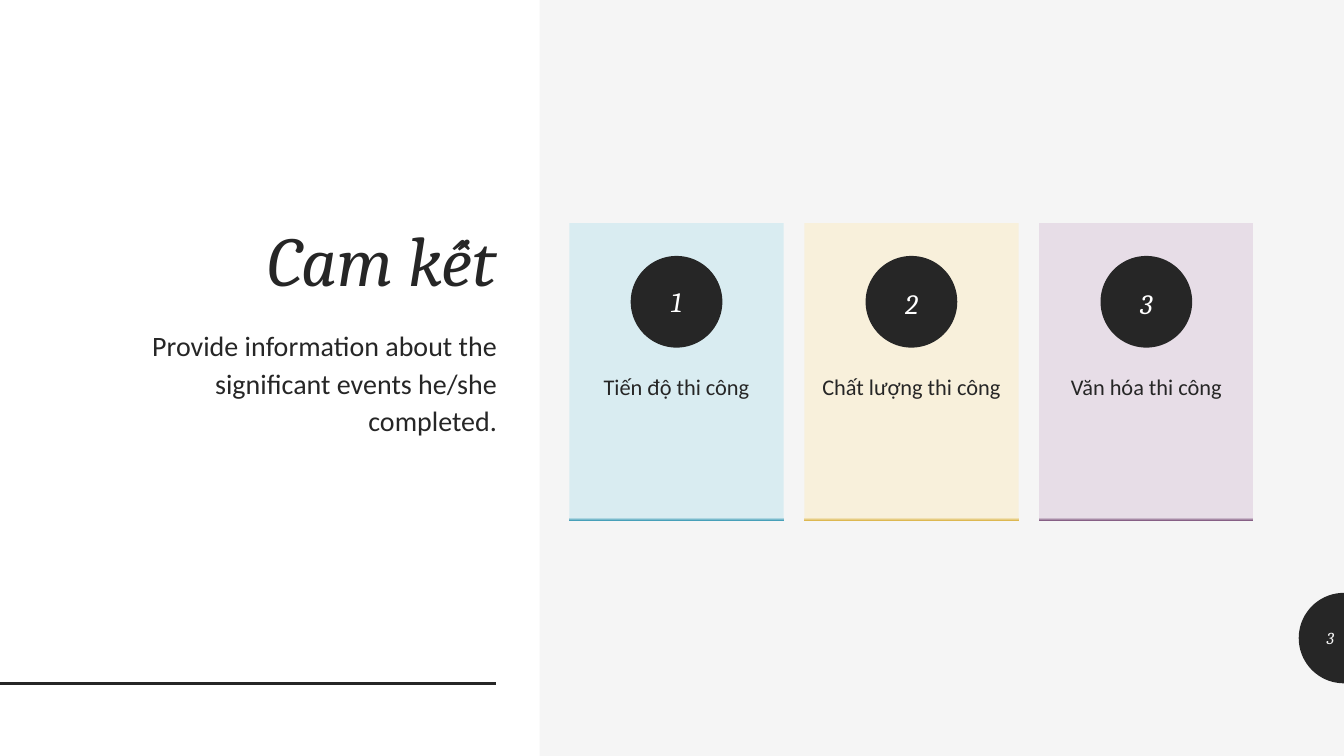
import math

import lxml.etree
import pptx
import pptx.dml.color
import pptx.enum.shapes
import pptx.enum.text
import pptx.oxml.ns
import pptx.util

Cm = pptx.util.Cm
Pt = pptx.util.Pt
qn = pptx.oxml.ns.qn
ALIGN = pptx.enum.text.PP_ALIGN
ANCHOR = pptx.enum.text.MSO_ANCHOR
SHAPE = pptx.enum.shapes.MSO_SHAPE

TITLE = "Cam kết"
INTRODUCTION = "Provide information about the significant events he/she completed."
PAGE_NUMBER = "3"
# number, its line spacing, label, card colour, bottom edge colour
COMMITMENTS = [
    ("1", 1.0, "Tiến độ thi công", "D9ECF1", "439EB7"),
    ("2", 1.12, "Chất lượng thi công", "F8F0DB", "DCB64D"),
    ("3", 1.12, "Văn hóa thi công", "E7DDE7", "835B82"),
]
DARK, PALE, WHITE = "262626", "F5F5F5", "FFFFFF"

SLIDE_WIDTH, SLIDE_HEIGHT = 33.87, 19.05
PANEL_WIDTH = 13.6
RULE_TOP, RULE_WIDTH = 17.22, 12.5
CARD_LEFT, CARD_TOP, CARD_WIDTH, CARD_HEIGHT = 14.35, 5.62, 5.4, 7.5
CARD_STEP = 5.92
DISC_TOP, DISC_SIZE = 6.45, 2.31
LABEL_INSET = 3.71
TAB_RADIUS, TAB_MIDDLE = 1.14, 16.08


def colour(value):
    return pptx.dml.color.RGBColor.from_string(value)


def place(shape, left, top, width, height):
    shape.left, shape.top = Cm(left), Cm(top)
    shape.width, shape.height = Cm(width), Cm(height)


def paint(shape, value):
    shape.shadow.inherit = False
    shape.line.fill.background()
    shape.fill.solid()
    shape.fill.fore_color.rgb = colour(value)


def paint_with_edge(shape, value, edge):
    """Fill with one colour that turns into the edge colour at the very bottom."""
    paint(shape, value)
    shape.fill.gradient()
    shape.fill.gradient_angle = 270
    stops = shape.element.spPr.find(qn("a:gradFill")).find(qn("a:gsLst"))
    for stop in list(stops):
        stops.remove(stop)
    for position, stop_colour in ((0, value), (99, value), (100, edge)):
        stop = lxml.etree.SubElement(stops, qn("a:gs"), pos=str(position * 1000))
        lxml.etree.SubElement(stop, qn("a:srgbClr"), val=stop_colour)


def write(shape, text, font, size, value, align, anchor, spacing=1.0, before=0, inset=None):
    """Set the text; inset is the top margin, with the other margins at zero."""
    frame = shape.text_frame
    frame.text = text
    frame.word_wrap = True
    frame.auto_size = pptx.enum.text.MSO_AUTO_SIZE.NONE
    frame.vertical_anchor = anchor
    if inset is not None:
        frame.margin_left = frame.margin_right = frame.margin_bottom = 0
        frame.margin_top = Cm(inset)
    para = frame.paragraphs[0]
    para.alignment = align
    para.line_spacing = spacing
    para.space_before = Pt(before)
    span = para.runs[0]
    span.font.name = font
    span.font.size = Pt(size)
    span.font.italic = font == "Cambria"
    span.font.color.rgb = colour(value)


def remove_bullet(para):
    properties = para._p.get_or_add_pPr()
    properties.set("marL", "0")
    properties.set("indent", "0")
    lxml.etree.SubElement(properties, qn("a:buNone"))


def add_backdrop(page):
    """White panel, rule and page tab, all behind the title."""
    panel = page.shapes.add_shape(
        SHAPE.RECTANGLE, 0, 0, Cm(PANEL_WIDTH), Cm(SLIDE_HEIGHT))
    paint(panel, WHITE)

    rule = page.shapes.add_connector(
        pptx.enum.shapes.MSO_CONNECTOR.STRAIGHT,
        0, Cm(RULE_TOP), Cm(RULE_WIDTH), Cm(RULE_TOP))
    rule.line.color.rgb = colour(DARK)
    rule.line.width = Pt(2)
    lxml.etree.SubElement(rule.element.spPr, qn("a:effectLst"))

    angles = [math.radians(90 + step * 5) for step in range(37)]
    points = [(Cm(SLIDE_WIDTH + TAB_RADIUS * math.cos(angle)),
               Cm(TAB_MIDDLE + TAB_RADIUS * math.sin(angle))) for angle in angles]
    outline = page.shapes.build_freeform(*points[0])
    outline.add_line_segments(points[1:], close=True)
    tab = outline.convert_to_shape()
    paint(tab, DARK)

    for shape in (tab, panel, rule):
        page.shapes.title.element.addprevious(shape.element)


def add_card(page, index, number, spacing, label, value, edge):
    left = CARD_LEFT + index * CARD_STEP
    card = page.shapes.add_shape(
        SHAPE.RECTANGLE, Cm(left), Cm(CARD_TOP), Cm(CARD_WIDTH), Cm(CARD_HEIGHT))
    paint_with_edge(card, value, edge)
    write(card, label, "Calibri", 16, DARK, ALIGN.CENTER, ANCHOR.TOP,
          1.12, 9, LABEL_INSET)

    disc = page.shapes.add_shape(
        SHAPE.OVAL, Cm(left + (CARD_WIDTH - DISC_SIZE) / 2), Cm(DISC_TOP),
        Cm(DISC_SIZE), Cm(DISC_SIZE))
    paint(disc, DARK)
    write(disc, number, "Cambria", 20, WHITE, ALIGN.CENTER, ANCHOR.MIDDLE,
          spacing, 9, 0)


def main():
    deck = pptx.Presentation()
    deck.slide_width, deck.slide_height = Cm(SLIDE_WIDTH), Cm(SLIDE_HEIGHT)
    page = deck.slides.add_slide(deck.slide_layouts[1])
    page.background.fill.solid()
    page.background.fill.fore_color.rgb = colour(PALE)
    add_backdrop(page)

    title = page.shapes.title
    place(title, 2.11, 1.55, 10.65, 6.17)
    write(title, TITLE, "Cambria", 50, DARK, ALIGN.RIGHT, ANCHOR.BOTTOM, 0.9)

    introduction = page.placeholders[1]
    place(introduction, 2.11, 8.05, 10.67, 7.92)
    write(introduction, INTRODUCTION, "Calibri", 20, DARK, ALIGN.RIGHT, ANCHOR.TOP, 1.12, 9)
    remove_bullet(introduction.text_frame.paragraphs[0])

    for index, commitment in enumerate(COMMITMENTS):
        add_card(page, index, *commitment)

    page_number = page.shapes.add_textbox(
        Cm(SLIDE_WIDTH - TAB_RADIUS), Cm(TAB_MIDDLE - 0.51), Cm(TAB_RADIUS), Cm(1.02))
    write(page_number, PAGE_NUMBER, "Cambria", 12, PALE, ALIGN.RIGHT, ANCHOR.MIDDLE)

    deck.save("out.pptx")


if __name__ == "__main__":
    main()
